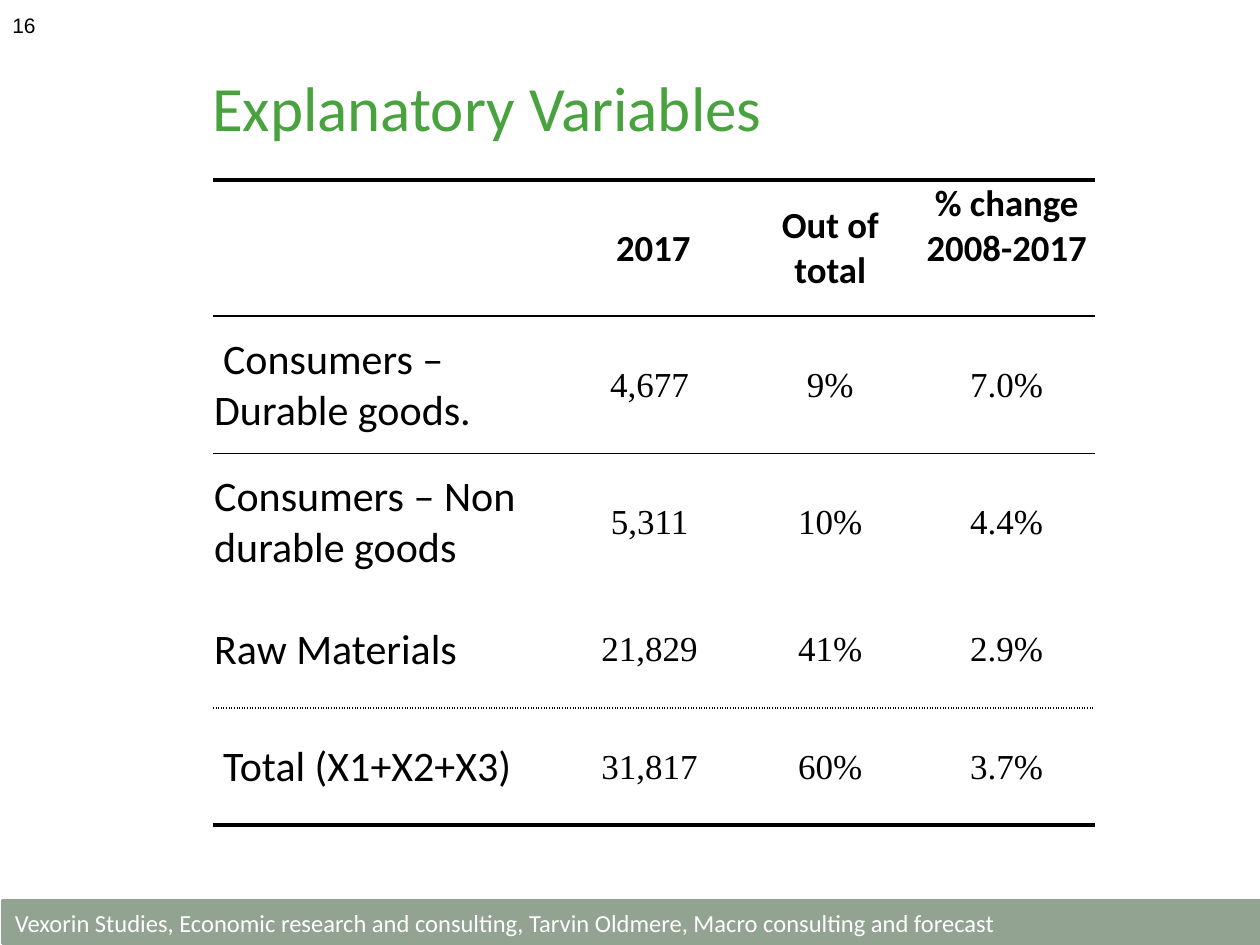
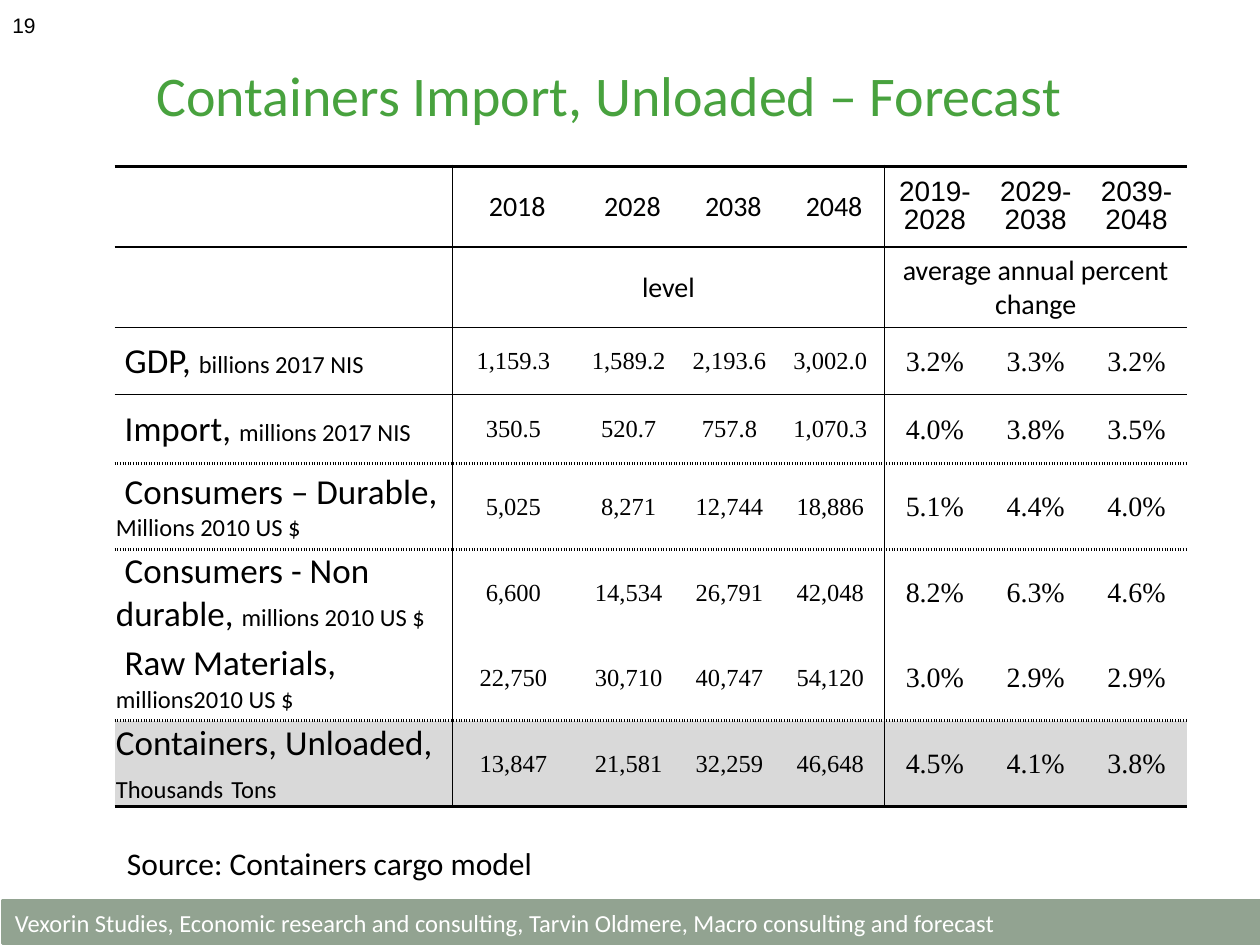
from lxml import etree
from pptx import Presentation
from pptx.dml.color import RGBColor
from pptx.enum.shapes import MSO_SHAPE
from pptx.enum.text import MSO_ANCHOR as Anchor, MSO_AUTO_SIZE as AutoSize, PP_ALIGN as Align
from pptx.oxml.ns import qn
from pptx.util import Inches, Pt

GREEN, SAGE, GREY, BLACK, WHITE = "48A23E", "92A391", "D9D9D9", "000000", "FFFFFF"
SANS, SERIF, RTL_FONT = "Calibri", "Times New Roman", "Arial"
FOOTER = ("Vexorin Studies, Economic research and consulting, Tarvin Oldmere, "
          "Macro consulting and forecast")

# Table rules: width in points and dash
THICK, THIN = (2.25, "solid"), (1, "solid")
FINE_DOTS, DOTS = (1, "sysDot"), (2.25, "sysDot")


def rgb(color):
    return RGBColor.from_string(color)


def style(run, size, color=BLACK, font=SANS, bold=False):
    run.font.size, run.font.name, run.font.bold = Pt(size), font, bold
    run.font.color.rgb = rgb(color)


def set_right_to_left(paragraph):
    paragraph._p.get_or_add_pPr().set("rtl", "1")
    for run in paragraph.runs:
        script_font = etree.SubElement(run.font._element, qn("a:cs"))
        script_font.set("typeface", RTL_FONT)


def add_text(slide, box, text, size, anchor=Anchor.TOP):
    frame = slide.shapes.add_textbox(*map(Inches, box)).text_frame
    frame.word_wrap, frame.vertical_anchor, frame.text = True, anchor, text
    style(frame.paragraphs[0].runs[0], size)
    return frame.paragraphs[0]


# Shared slide parts
def add_footer_band(prs, slide):
    """Build the band once and move it to the slide master."""
    band = slide.shapes.add_shape(
        MSO_SHAPE.RECTANGLE, *map(Inches, (0.02, 7.15, 10.01, 0.34)))
    band.shadow.inherit = False
    band.fill.solid()
    band.fill.fore_color.rgb = band.line.color.rgb = rgb(SAGE)
    band.line.width = Pt(2)
    frame = band.text_frame
    frame.text, frame.vertical_anchor = FOOTER, Anchor.MIDDLE
    frame.paragraphs[0].alignment = Align.LEFT
    style(frame.paragraphs[0].runs[0], 14, WHITE)
    prs.slide_master.shapes.element.append(band.element)


def add_titled_slide(prs, number, title, box, size, align):
    slide = prs.slides.add_slide(prs.slide_layouts[5])
    heading = slide.shapes.title
    heading.left, heading.top, heading.width, heading.height = map(Inches, box)
    frame = heading.text_frame
    frame.text, frame.vertical_anchor = title, Anchor.MIDDLE
    frame.auto_size = AutoSize.NONE
    frame.paragraphs[0].alignment = align
    style(frame.paragraphs[0].runs[0], size, GREEN)

    page = add_text(slide, (0, 0, 2.33, 0.4), number, 12, Anchor.MIDDLE)
    page.alignment = Align.LEFT
    set_right_to_left(page)
    return slide


# Tables
def set_border(cell, side, rule):
    width, dash = rule or (0, None)
    line = etree.SubElement(cell._tc.get_or_add_tcPr(), qn(f"a:ln{side}"))
    line.set("w", str(Pt(width)))
    if not rule:
        etree.SubElement(line, qn("a:noFill"))
        return
    fill = etree.SubElement(line, qn("a:solidFill"))
    etree.SubElement(fill, qn("a:srgbClr")).set("val", BLACK)
    etree.SubElement(line, qn("a:prstDash")).set("val", dash)


def add_ruled_table(slide, left, top, widths, heights, rules, dividers=()):
    """rules holds one line per row edge; dividers lists ruled column edges."""
    table = slide.shapes.add_table(
        len(heights), len(widths), Inches(left), Inches(top),
        Inches(sum(widths)), Inches(sum(heights))).table
    table.first_row = table.horz_banding = False
    for column, width in zip(table.columns, widths):
        column.width = Inches(width)
    for r, height in enumerate(heights):
        table.rows[r].height = Inches(height)
        for c in range(len(widths)):
            cell = table.cell(r, c)
            edges = {"L": THIN if c in dividers else None,
                     "R": THIN if c + 1 in dividers else None,
                     "T": rules[r], "B": rules[r + 1]}
            for side, rule in edges.items():
                set_border(cell, side, rule)
            cell.fill.background()
            cell.vertical_anchor = Anchor.MIDDLE
            cell.margin_left = cell.margin_right = cell.margin_top = Inches(0.01)
            cell.margin_bottom = 0
    return table


def fill_cell(cell, text, size, font=SANS, bold=False):
    cell.text_frame.text = text
    for paragraph in cell.text_frame.paragraphs:
        paragraph.alignment = Align.CENTER
        for run in paragraph.runs:
            style(run, size, font=font, bold=bold)


def fill_label(cell, lines, indent):
    """Each line is a list of (text, size) parts."""
    frame = cell.text_frame
    for i, parts in enumerate(lines):
        paragraph = frame.paragraphs[0] if i == 0 else frame.add_paragraph()
        paragraph.alignment = Align.LEFT
        if i == 0 and indent:
            paragraph._p.get_or_add_pPr().set("indent", str(Inches(indent)))
        for text, size in parts:
            run = paragraph.add_run()
            run.text = text
            style(run, size)


def fill_level(cell, text, size):
    fill_cell(cell, text, size, SERIF)
    cell.margin_right = Inches(0.07)


# Slide: explanatory variables
VARIABLES = [
    ("Consumers – Durable goods.", 0.07, "4,677", "9%", "7.0%"),
    ("Consumers – Non durable goods", 0, "5,311", "10%", "4.4%"),
    ("Raw Materials", 0, "21,829", "41%", "2.9%"),
    ("Total (X1+X2+X3)", 0.07, "31,817", "60%", "3.7%"),
]


def add_variables_table(slide, left, top):
    table = add_ruled_table(
        slide, left, top, [2.79, 1.41, 1.4, 1.4], [1.08, 1.09, 1.09, 0.93, 0.93],
        [THICK, THIN, THIN, None, FINE_DOTS, THICK])
    headings = ["2017", "Out of total", "% change\n2008-2017"]
    for c, heading in enumerate(headings, 1):
        fill_cell(table.cell(0, c), heading, 21, bold=True)
    table.cell(0, 3).vertical_anchor = Anchor.TOP
    for r, (label, indent, level, *shares) in enumerate(VARIABLES, 1):
        fill_label(table.cell(r, 0), [[(label, 24)]], indent)
        fill_level(table.cell(r, 1), level, 20)
        for c, share in enumerate(shares, 2):
            fill_cell(table.cell(r, c), share, 20, SERIF)


# Slide: containers forecast
YEARS = ["2018", "2028", "2038", "2048"]
PERIODS = ["2019-2028", "2029-2038", "2039-2048"]
FORECAST = [
    ([[("GDP, ", 20), ("billions 2017 NIS", 14)]],
     "1,159.3 1,589.2 2,193.6 3,002.0", "3.2% 3.3% 3.2%"),
    ([[("Import, ", 20), ("millions 2017 NIS", 14)]],
     "350.5 520.7 757.8 1,070.3", "4.0% 3.8% 3.5%"),
    ([[("Consumers – Durable,", 20)], [("Millions 2010 US $", 14)]],
     "5,025 8,271 12,744 18,886", "5.1% 4.4% 4.0%"),
    ([[("Consumers - Non durable, ", 20), ("millions 2010 US $", 14)]],
     "6,600 14,534 26,791 42,048", "8.2% 6.3% 4.6%"),
    ([[("Raw Materials, ", 20), ("millions2010 US $", 14)]],
     "22,750 30,710 40,747 54,120", "3.0% 2.9% 2.9%"),
    ([[("Containers, Unloaded,", 20)],
      [("Thousands", 14), (" ", 20), ("Tons", 14)]],
     "13,847 21,581 32,259 46,648", "4.5% 4.1% 3.8%"),
]


def add_forecast_table(slide, left, top):
    first_period = 1 + len(YEARS)
    table = add_ruled_table(
        slide, left, top, [2.68, 1.03] + [0.8] * 6,
        [0.64, 0.64, 0.53, 0.55] + [0.68] * 4,
        [THICK, THIN, THIN, THIN, DOTS, DOTS, None, DOTS, THICK],
        dividers=(1, first_period))

    # Two heading rows
    for c, heading in enumerate(YEARS + PERIODS, 1):
        fill_cell(table.cell(0, c), heading, 16)
        if c >= first_period:
            paragraph = table.cell(0, c).text_frame.paragraphs[0]
            paragraph.line_spacing = 0.9
            set_right_to_left(paragraph)
    for first, last, unit in ((1, 4, "level"),
                              (5, 7, "average annual percent change")):
        table.cell(1, first).merge(table.cell(1, last))
        fill_cell(table.cell(1, first), unit, 16)

    # Levels and growth rates
    last_row = len(FORECAST) + 1
    for r, (label, levels, rates) in enumerate(FORECAST, 2):
        fill_label(table.cell(r, 0), label, 0 if r == last_row else 0.07)
        for c, level in enumerate(levels.split(), 1):
            fill_level(table.cell(r, c), level, 14)
        for c, rate in enumerate(rates.split(), first_period):
            fill_cell(table.cell(r, c), rate, 16, SERIF)
    for cell in table.rows[last_row].cells:
        cell.fill.solid()
        cell.fill.fore_color.rgb = rgb(GREY)


def main():
    prs = Presentation()
    prs.slide_width, prs.slide_height = Inches(10), Inches(7.5)

    variables = add_titled_slide(prs, "16", "Explanatory Variables",
                                 (0.28, 0.24, 7.17, 1.2), 36, Align.CENTER)
    add_footer_band(prs, variables)
    add_variables_table(variables, 1.69, 1.43)

    forecast = add_titled_slide(prs, "19", "Containers Import, Unloaded – Forecast",
                                (1.14, 0.15, 8.27, 1.2), 32, Align.LEFT)
    add_forecast_table(forecast, 0.91, 1.32)
    add_text(forecast, (0.91, 6.65, 8.5, 0.4), "Source: Containers cargo model", 18)

    prs.save("out.pptx")


if __name__ == "__main__":
    main()
